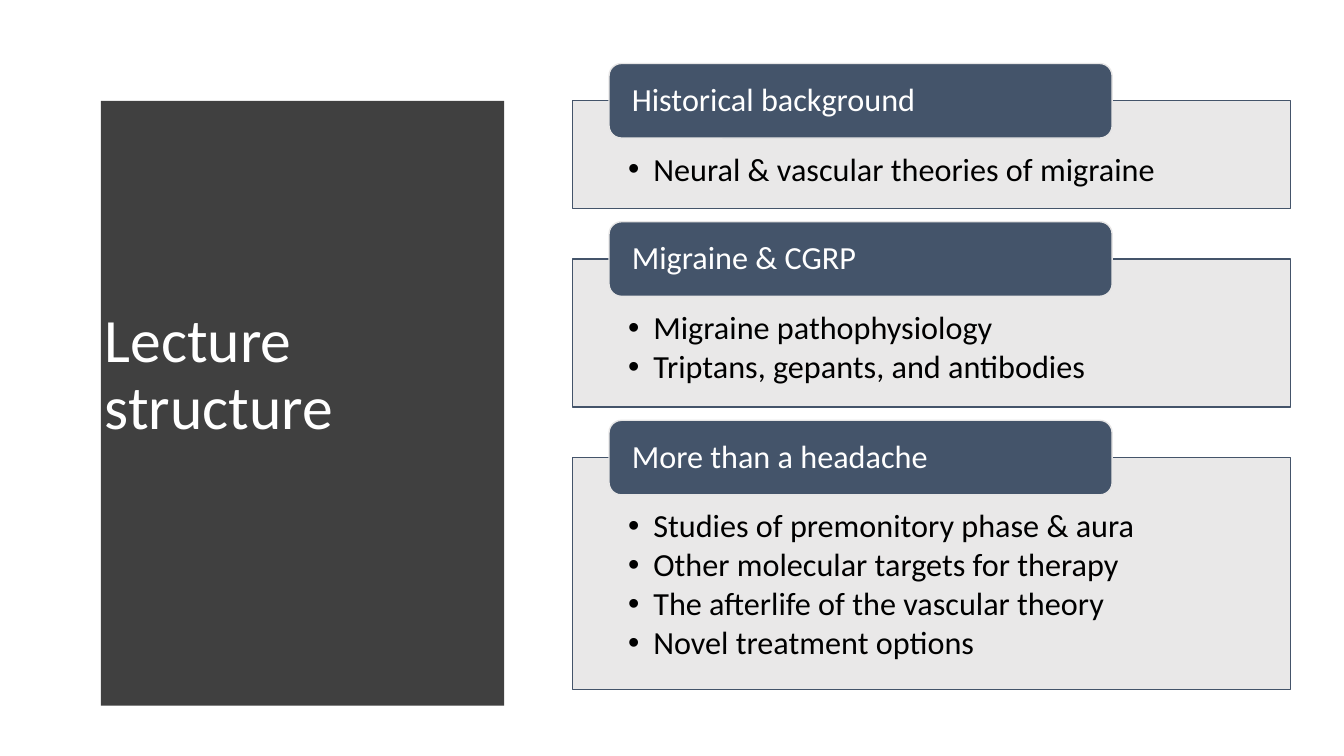
from lxml.etree import SubElement
from pptx import Presentation
from pptx.dml.color import RGBColor
from pptx.enum.shapes import MSO_SHAPE as Preset
from pptx.enum.text import MSO_ANCHOR as Anchor, MSO_AUTO_SIZE as AutoSize, PP_ALIGN as Align
from pptx.oxml.ns import qn
from pptx.util import Inches, Pt

HEADING = "Lecture structure"
SECTIONS = [
    ("Historical background", 1.07, ["Neural & vascular theories of migraine"]),
    ("Migraine & CGRP", 1.47, ["Migraine pathophysiology", "Triptans, gepants, and antibodies"]),
    ("More than a headache", 2.3, [
        "Studies of premonitory phase & aura",
        "Other molecular targets for therapy",
        "The afterlife of the vascular theory",
        "Novel treatment options",
    ]),
]
COLORS = {"side": "404040", "panel": "E7E6E6", "navy": "44546A", "white": "FFFFFF", "black": "000000"}
FONT = "Calibri"

SIDE_LEFT, SIDE_TOP, SIDE_BOTTOM = 0.53, 0.52, 6.96
SIDE_EDGE, BULGE, CURVE_STEPS = 5.08, 0.24, 48
PANEL_LEFT, PANEL_TOP, PANEL_WIDTH, PANEL_GAP = 5.68, 1, 7.12, 0.5
TAB_LEFT, TAB_WIDTH, TAB_HEIGHT = 6.04, 4.99, 0.74


def rgb(name):
    return RGBColor.from_string(COLORS[name])


def set_frame(frame, anchor, insets):
    frame.word_wrap = True
    frame.auto_size = AutoSize.NONE
    frame.vertical_anchor = anchor
    frame.margin_left, frame.margin_top, frame.margin_right, frame.margin_bottom = map(Inches, insets)


def write(paragraph, words, size, color):
    paragraph.alignment = Align.LEFT
    paragraph.line_spacing = 0.9
    run = paragraph.add_run()
    run.text = words
    run.font.name, run.font.size = FONT, Pt(size)
    run.font.color.rgb = rgb(color)


def add_bullet(paragraph):
    props = paragraph._p.get_or_add_pPr()
    props.set("marL", str(Inches(0.25)))
    props.set("indent", str(Inches(-0.25)))
    SubElement(props, qn("a:buFont"), typeface="Arial")
    SubElement(props, qn("a:buChar"), char="•")
    paragraph.space_after = Pt(3)


def add_block(slide, preset, box, fill, line):
    block = slide.shapes.add_shape(preset, *map(Inches, box))
    block.shadow.inherit = False
    block.fill.solid()
    block.fill.fore_color.rgb = rgb(fill)
    block.line.color.rgb = rgb(line)
    block.line.width = Pt(1)
    return block


def add_side(slide):
    middle, half = (SIDE_TOP + SIDE_BOTTOM) / 2, (SIDE_BOTTOM - SIDE_TOP) / 2
    curve = []
    for step in range(CURVE_STEPS + 1):
        offset = 2 * step / CURVE_STEPS - 1
        curve.append((SIDE_EDGE + BULGE * (1 - offset ** 2), middle + half * offset))
    outline = slide.shapes.build_freeform(SIDE_LEFT, SIDE_TOP, scale=Inches(1))
    outline.add_line_segments(curve + [(SIDE_LEFT, SIDE_BOTTOM)], close=True)
    side = outline.convert_to_shape()
    side.shadow.inherit = False
    side.fill.solid()
    side.fill.fore_color.rgb = rgb("side")
    side.line.fill.background()


def add_heading(slide):
    title = slide.shapes.title
    title.left, title.top, title.width, title.height = map(Inches, (0.94, 1.11, 3.74, 5.24))
    set_frame(title.text_frame, Anchor.MIDDLE, (0.1, 0.05, 0.1, 0.05))
    write(title.text_frame.paragraphs[0], HEADING, 44, "white")
    slide.shapes._spTree.append(title._element)


def add_section(slide, top, name, height, topics):
    panel = add_block(slide, Preset.RECTANGLE, (PANEL_LEFT, top, PANEL_WIDTH, height), "panel", "navy")
    panel_color = panel.fill._xPr.find(qn("a:solidFill"))[0]
    SubElement(panel_color, qn("a:alpha"), val="90000")
    set_frame(panel.text_frame, Anchor.TOP, (0.55, 0.52, 0.55, 0.18))
    for index, topic in enumerate(topics):
        paragraph = panel.text_frame.add_paragraph() if index else panel.text_frame.paragraphs[0]
        add_bullet(paragraph)
        write(paragraph, topic, 23, "black")
    tab_box = (TAB_LEFT, top - TAB_HEIGHT / 2, TAB_WIDTH, TAB_HEIGHT)
    tab = add_block(slide, Preset.ROUNDED_RECTANGLE, tab_box, "navy", "panel")
    set_frame(tab.text_frame, Anchor.MIDDLE, (0.19, 0, 0.19, 0))
    write(tab.text_frame.paragraphs[0], name, 23, "white")


def main():
    deck = Presentation()
    deck.slide_width, deck.slide_height = Inches(13.33), Inches(7.5)
    slide = deck.slides.add_slide(deck.slide_layouts[5])
    add_side(slide)
    add_heading(slide)
    top = PANEL_TOP
    for name, height, topics in SECTIONS:
        add_section(slide, top, name, height, topics)
        top += height + PANEL_GAP
    deck.save("out.pptx")


if __name__ == "__main__":
    main()
